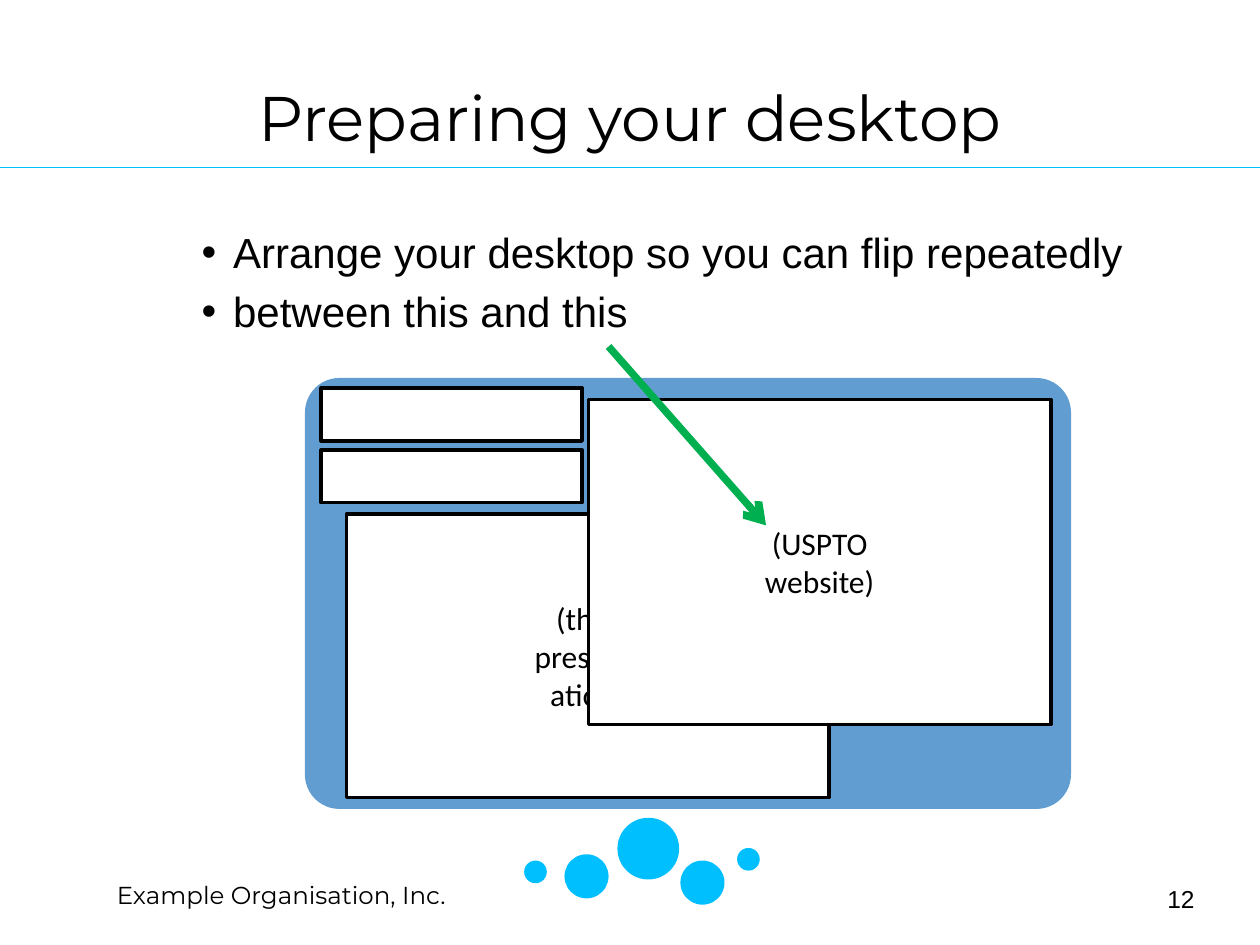
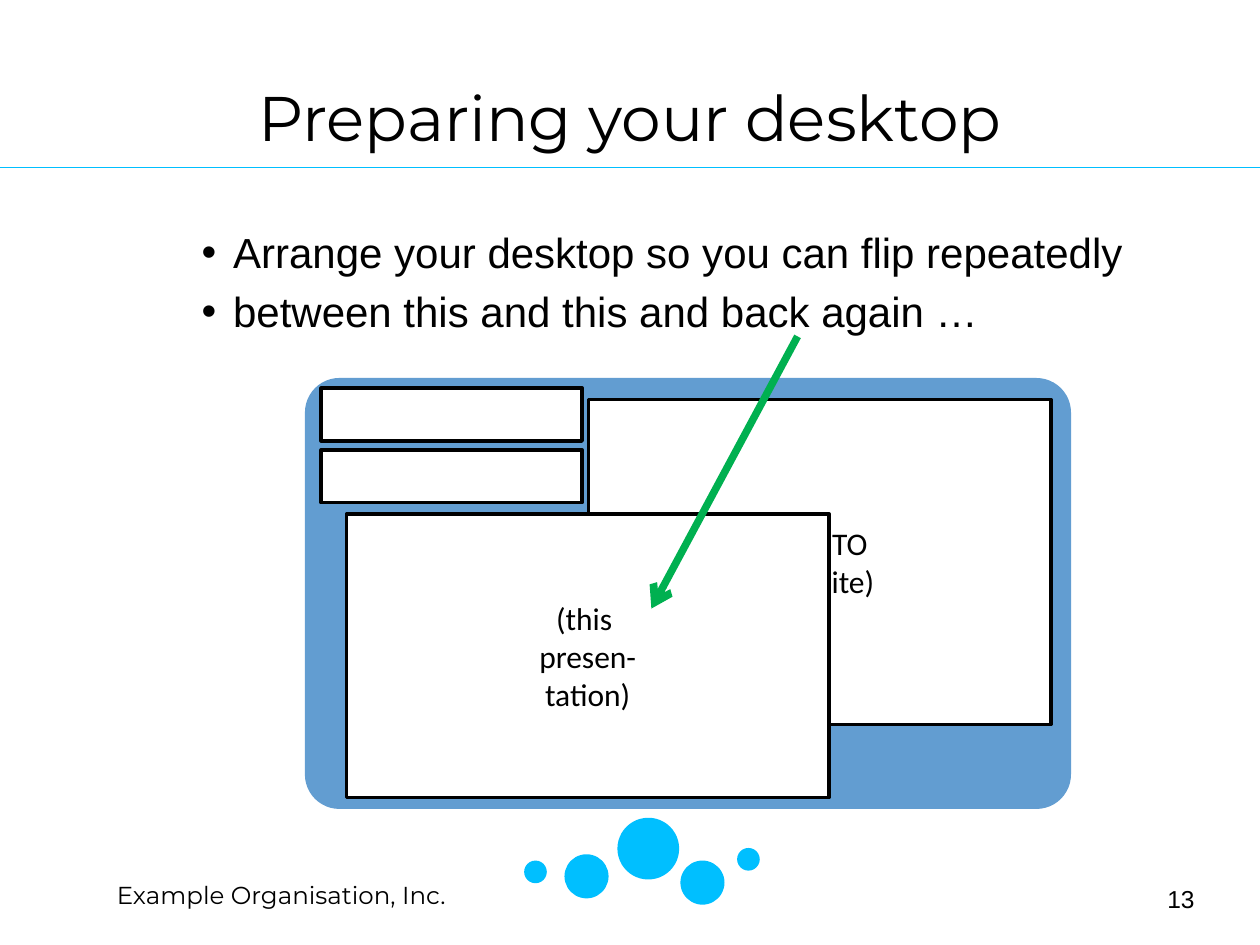
import dataclasses
import lxml.etree
import pptx
import pptx.dml.color
import pptx.enum.shapes
import pptx.enum.text
import pptx.oxml.ns
import pptx.util

EMU = 9144  # one px is a hundredth of an inch
KIND = pptx.enum.shapes.MSO_SHAPE
ALIGN = pptx.enum.text.PP_ALIGN
MIDDLE = pptx.enum.text.MSO_ANCHOR.MIDDLE


@dataclasses.dataclass(frozen=True)
class Theme:
    ink: str = "000000"
    paper: str = "FFFFFF"
    sky: str = "00BFFF"
    desk: str = "629DD1"
    green: str = "00B050"
    brand: str = "Montserrat"
    body: str = "Arial"
    label: str = "Calibri"
    head_size: int = 36
    list_size: int = 24
    label_size: int = 18
    foot_size: int = 14


def px(*sizes):
    return [size * EMU for size in sizes]


def rgb(code):
    return pptx.dml.color.RGBColor.from_string(code)


def child(parent, tag, **attrs):
    return lxml.etree.SubElement(parent, pptx.oxml.ns.qn(tag), attrs)


class Deck:
    def __init__(self, theme):
        self.theme = theme
        self.file = pptx.Presentation()
        self.file.slide_width, self.file.slide_height = px(1000, 750)
        self.slide = None

    def start(self):
        self.slide = self.file.slides.add_slide(self.file.slide_layouts[1])

    def place(self, shape, box):
        shape.left, shape.top, shape.width, shape.height = px(*box)

    def style(self, frame, font, size, align):
        for para in frame.paragraphs:
            para.alignment = align
            for run in para.runs:
                run.font.name = font
                run.font.size = pptx.util.Pt(size)
                run.font.color.rgb = rgb(self.theme.ink)

    def title(self, text):
        shape = self.slide.shapes.title
        self.place(shape, (50, 30, 900, 125))
        frame = shape.text_frame
        frame.text = text
        frame.vertical_anchor = MIDDLE
        self.style(frame, self.theme.brand, self.theme.head_size, ALIGN.CENTER)

    def bullets(self, items):
        shape = self.slide.placeholders[1]
        self.place(shape, (50, 175, 900, 495))
        frame = shape.text_frame
        frame.auto_size = pptx.enum.text.MSO_AUTO_SIZE.NONE
        frame.text = "\n".join(items)
        for row, para in enumerate(frame.paragraphs):
            para.level = 1
            para.space_before = pptx.util.Pt(5 if row else 0)
            props = para._p.get_or_add_pPr()
            props.set("marL", str(125 * EMU))
            props.set("indent", str(-25 * EMU))
            child(props, "a:buFont", typeface=self.theme.body)
            child(props, "a:buChar", char="•")
        self.style(frame, self.theme.body, self.theme.list_size, ALIGN.LEFT)

    def note(self, text, box, font, align):
        frame = self.slide.shapes.add_textbox(*px(*box)).text_frame
        frame.word_wrap = True
        frame.vertical_anchor = MIDDLE
        frame.text = text
        self.style(frame, font, self.theme.foot_size, align)

    def shape(self, kind, box, fill):
        shape = self.slide.shapes.add_shape(kind, *px(*box))
        shape.shadow.inherit = False
        shape.fill.solid()
        shape.fill.fore_color.rgb = rgb(fill)
        shape.line.fill.background()
        return shape

    def window(self, box, text=""):
        shape = self.shape(KIND.RECTANGLE, box, self.theme.paper)
        shape.line.color.rgb = rgb(self.theme.ink)
        shape.line.width = pptx.util.Pt(2)
        if text:
            frame = shape.text_frame
            frame.vertical_anchor = MIDDLE
            frame.text = text
            self.style(frame, self.theme.label, self.theme.label_size,
                       ALIGN.CENTER)

    def line(self, ends, color, width, arrow=False):
        link = self.slide.shapes.add_connector(
            pptx.enum.shapes.MSO_CONNECTOR.STRAIGHT, *px(*ends))
        link.line.color.rgb = rgb(color)
        link.line.width = pptx.util.Pt(width)
        if arrow:
            child(link.line._get_or_add_ln(), "a:tailEnd", type="arrow")
        child(link._element.spPr, "a:effectLst")

    def frame(self, number):
        # Title rule, footer and dots
        self.line((0, 133, 1000, 133), self.theme.sky, 1)
        self.note("Example Organisation, Inc.", (83, 693, 295, 34),
                  self.theme.brand, ALIGN.LEFT)
        for left, top, size in DOTS:
            self.shape(KIND.OVAL, (left, top, size, size), self.theme.sky)
        self.note(str(number), (725, 693, 233, 40),
                  self.theme.body, ALIGN.RIGHT)

    def desktop(self, windows):
        # Desk with two small windows, then the large ones back to front
        desk = self.shape(KIND.ROUNDED_RECTANGLE, (242, 300, 608, 342),
                          self.theme.desk)
        desk.adjustments[0] = 0.08
        for top in (308, 357):
            self.window((255, top, 207, 42))
        for box, text in windows:
            self.window(box, text)


DOTS = [(416, 683, 18), (448, 678, 35), (490, 649, 49),
        (540, 683, 35), (585, 673, 18)]
SHOW = (275, 408, 383, 225)
SITE = ((467, 317, 367, 258), "(USPTO\nwebsite)")

# Number, second bullet, windows from back to front, arrow
PAGES = [
    (12, "between this and this",
     [(SHOW, "(this \npresent-\nation)"), SITE], (483, 275, 608, 417)),
    (13, "between this and this and back again …",
     [SITE, (SHOW, "(this \npresen-\ntation)")], (633, 267, 517, 483)),
]


def main():
    deck = Deck(Theme())
    for number, point, windows, arrow in PAGES:
        deck.start()
        deck.title("Preparing your desktop")
        deck.bullets(["Arrange your desktop so you can flip repeatedly", point])
        deck.frame(number)
        deck.desktop(windows)
        deck.line(arrow, deck.theme.green, 4.25, arrow=True)
    deck.file.save("out.pptx")


if __name__ == "__main__":
    main()
